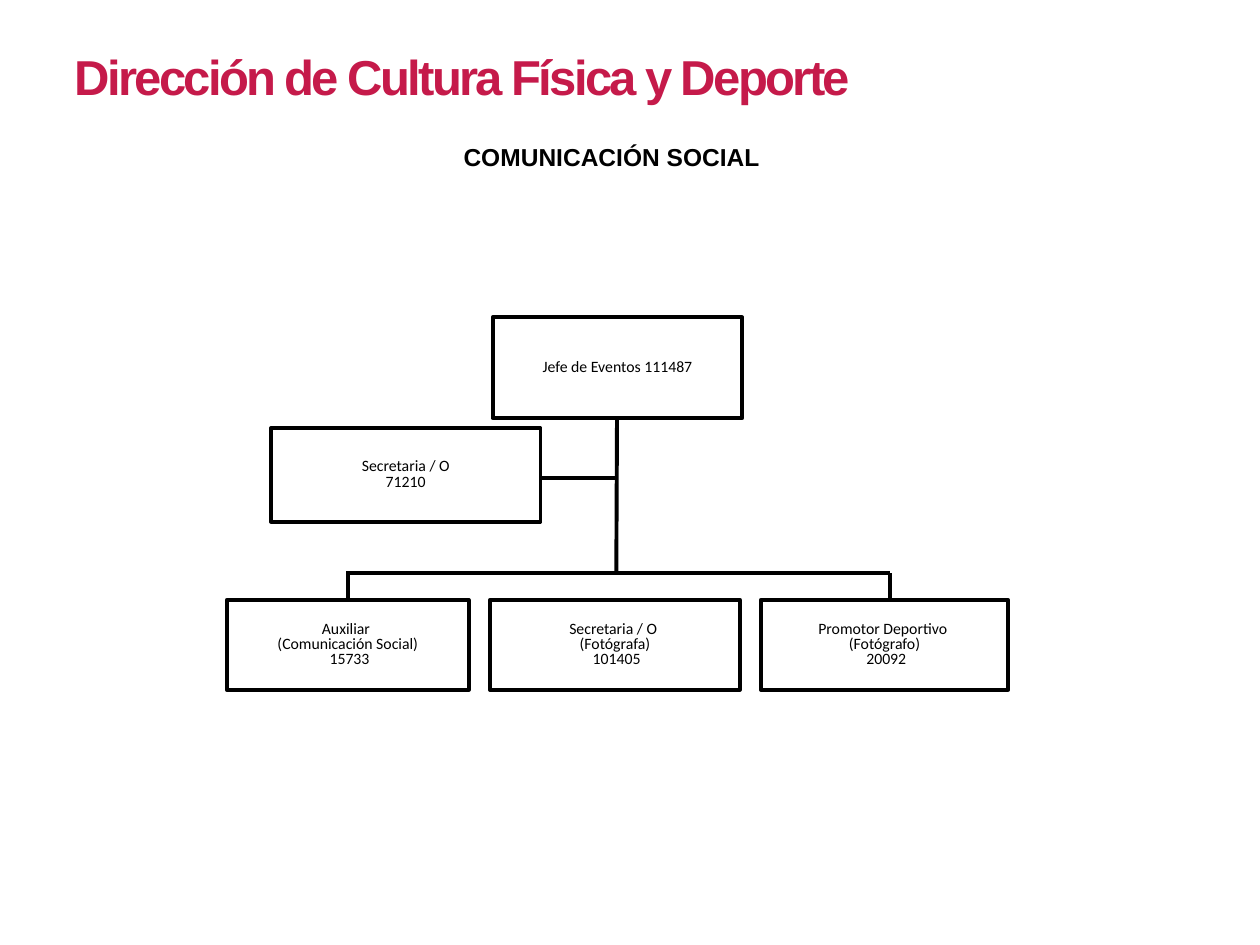
from pptx import Presentation
from pptx.dml.color import RGBColor
from pptx.enum.shapes import MSO_CONNECTOR, MSO_SHAPE
from pptx.enum.text import MSO_ANCHOR, MSO_AUTO_SIZE, PP_ALIGN
from pptx.oxml.ns import qn
from pptx.util import Pt
from lxml.etree import SubElement

CRIMSON = RGBColor(0xC5, 0x1A, 0x4A)
BLACK = RGBColor(0, 0, 0)
WHITE = RGBColor(255, 255, 255)

TITLE_FONT = {"name": "Arial", "size": Pt(28), "bold": True}
HEADING_FONT = {"name": "Arial", "size": Pt(14), "bold": True}
CARD_FONT = {"name": "Calibri", "size": Pt(9), "bold": False}
CARD_PARAGRAPH = {"alignment": PP_ALIGN.CENTER, "line_spacing": 0.8,
                  "space_before": Pt(0), "space_after": Pt(0)}
LINE_WIDTH = Pt(2.25)


def set_format(obj, values):
    for name, value in values.items():
        setattr(obj, name, value)


def set_font(r, values, color):
    set_format(r.font, values)
    r.font.color.rgb = color


def set_line(line):
    line.color.rgb = BLACK
    line.width = LINE_WIDTH


def add_title(slide, box, text):
    sp = slide.shapes.title
    sp.left, sp.top, sp.width, sp.height = map(Pt, box)
    tf = sp.text_frame
    set_format(tf, {"vertical_anchor": MSO_ANCHOR.TOP, "word_wrap": True,
                    "auto_size": MSO_AUTO_SIZE.NONE})
    p = tf.paragraphs[0]
    p.alignment = PP_ALIGN.LEFT
    r = p.add_run()
    r.text = text
    set_font(r, TITLE_FONT, CRIMSON)
    r.font._element.set("spc", "-150")


def add_heading(slide, box, text):
    tf = slide.shapes.add_textbox(*map(Pt, box)).text_frame
    tf.word_wrap = False
    r = tf.paragraphs[0].add_run()
    r.text = text
    set_font(r, HEADING_FONT, BLACK)


def add_card(slide, box, lines):
    sp = slide.shapes.add_shape(MSO_SHAPE.RECTANGLE, *map(Pt, box))
    sp.shadow.inherit = False
    sp.fill.solid()
    sp.fill.fore_color.rgb = WHITE
    set_line(sp.line)
    tf = sp.text_frame
    set_format(tf, {"vertical_anchor": MSO_ANCHOR.MIDDLE, "word_wrap": False})
    for i, text in enumerate(lines):
        p = tf.add_paragraph() if i else tf.paragraphs[0]
        set_format(p, CARD_PARAGRAPH)
        r = p.add_run()
        r.text = text
        set_font(r, CARD_FONT, BLACK)


def add_link(slide, *points):
    cxn = slide.shapes.add_connector(MSO_CONNECTOR.STRAIGHT, *map(Pt, points))
    set_line(cxn.line)
    SubElement(cxn._element.spPr, qn("a:effectLst"))


def add_org_chart(slide, box):
    left, top, width, height = box
    trunk_x = left + 222.6
    bus_y = top + 146.2
    bus_left, bus_right = left + 69, left + 379.2
    staff_height = 51.5
    staff_top = top + height - staff_height
    head = (left + 151.9, top, 142.6, 57.6)
    assistant = (left + 25.2, top + 63.4, 154.1, 53.3)
    assistant_y = top + 91.5
    staff = [
        (138.2, ["Auxiliar ", "(Comunicación Social)", " 15733"]),
        (142.6, ["Secretaria / O ", "(Fotógrafa)", " 101405"]),
        (141.1, ["Promotor Deportivo ", "(Fotógrafo)", " 20092"]),
    ]
    gap = (width - sum(w for w, _ in staff)) / (len(staff) - 1)

    add_link(slide, trunk_x + 0.4, top + head[3], trunk_x, bus_y)
    add_link(slide, assistant[0] + assistant[2], assistant_y, trunk_x, assistant_y)
    add_link(slide, bus_left - 0.7, bus_y, bus_right, bus_y)
    for x in (bus_left, bus_right):
        add_link(slide, x, bus_y, x, staff_top)

    add_card(slide, head, ["Jefe de Eventos 111487"])
    add_card(slide, assistant, ["Secretaria / O", "71210"])
    x = left
    for card_width, lines in staff:
        add_card(slide, (x, staff_top, card_width, staff_height), lines)
        x += card_width + gap


def main():
    prs = Presentation()
    prs.slide_width, prs.slide_height = Pt(720), Pt(540)
    slide = prs.slides.add_slide(prs.slide_layouts[5])
    add_title(slide, (35.3, 23, 490.3, 41), "Dirección de Cultura Física y Deporte")
    add_heading(slide, (257.8, 77.8, 185, 24.5), "COMUNICACIÓN SOCIAL")
    add_org_chart(slide, (129.6, 181.4, 446.4, 212.8))
    prs.save("out.pptx")


if __name__ == "__main__":
    main()
